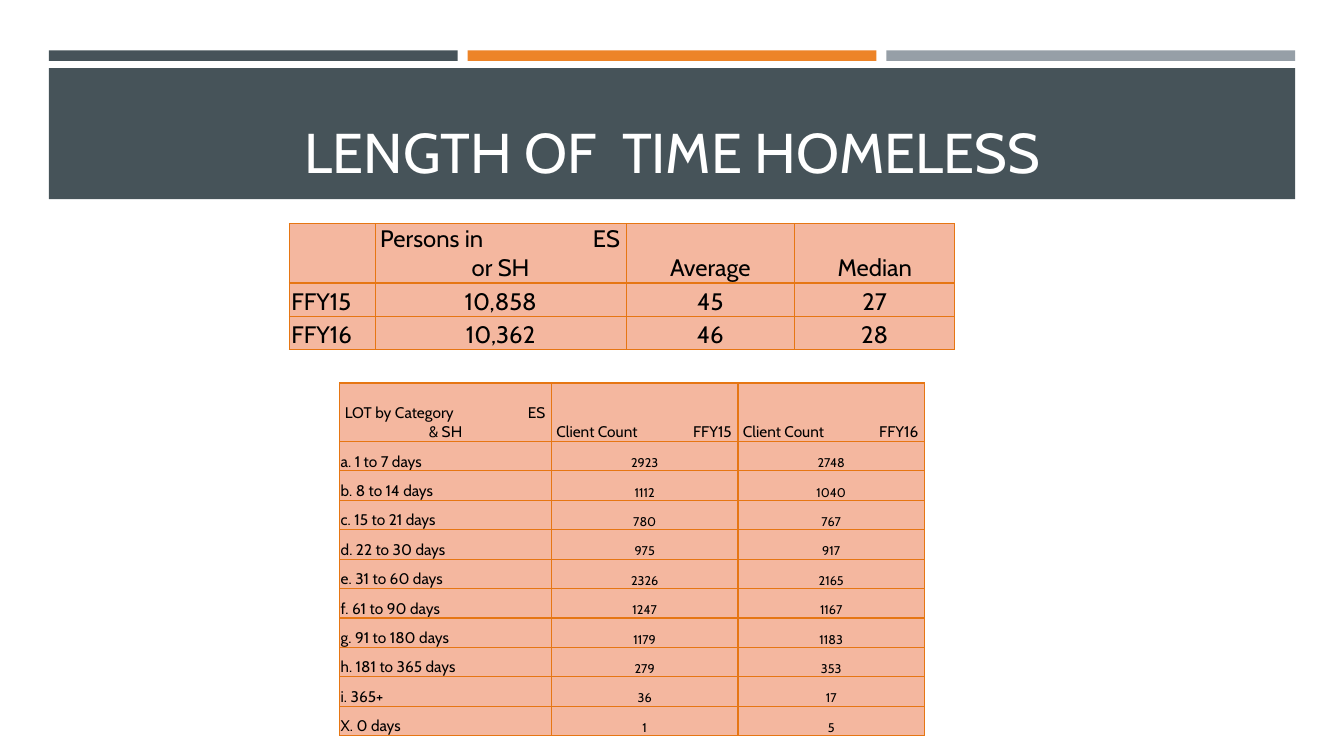
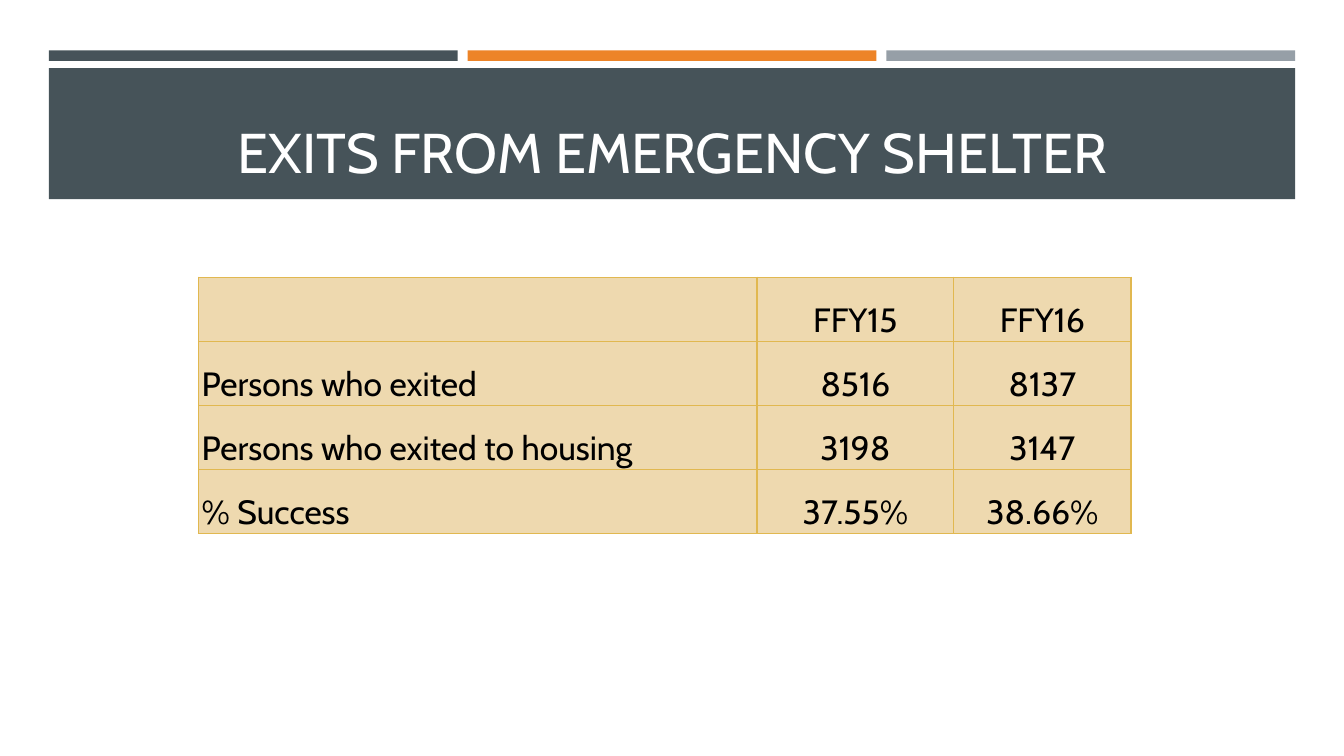
"""Build two slides of tables on time spent homeless and exits from shelter."""
from dataclasses import dataclass

from lxml.etree import SubElement
from pptx import Presentation
from pptx.dml.color import RGBColor
from pptx.enum.shapes import MSO_SHAPE
from pptx.enum.text import MSO_ANCHOR, MSO_AUTO_SIZE, PP_ALIGN
from pptx.oxml import parse_xml
from pptx.oxml.ns import nsdecls, qn
from pptx.util import Inches, Pt


@dataclass(frozen=True)
class Theme:
    font: str = "Cabin"
    slate: str = "465359"
    orange: str = "ED8428"
    gray: str = "969FA7"
    white: str = "FFFFFF"
    black: str = "000000"
    peach: str = "F4B79F"
    peach_border: str = "E67613"
    sand: str = "EED9AF"
    sand_border: str = "E1B850"
    title_size: float = 40
    large_size: float = 24
    medium_size: float = 17
    label_size: float = 11
    count_size: float = 9


theme = Theme()
presentation = Presentation()
presentation.slide_width = Inches(13.33)
presentation.slide_height = Inches(7.5)
column_unit = presentation.slide_width / 100
row_unit = presentation.slide_height / 100
title_layout = presentation.slide_layouts[5]


def add_run(paragraph, text, size, color):
    run = paragraph.add_run()
    run.text = text
    run.font.name = theme.font
    run.font.size = Pt(size)
    run.font.bold = False
    run.font.color.rgb = RGBColor.from_string(color)


def add_grid(slide, grid):
    left, top = grid["corner"]
    widths = [int(width * column_unit) for width in grid["columns"]]
    heights = [int(height * row_unit) for height in grid["heights"]]
    table = slide.shapes.add_table(
        len(heights), len(widths), int(left * column_unit), int(top * row_unit),
        sum(widths), sum(heights)).table
    table.first_row = table.horz_banding = False
    for column, width in zip(table.columns, widths):
        column.width = width
    for row, height in zip(table.rows, heights):
        row.height = height
    for row_index, values in enumerate(grid["values"]):
        for column_index, text in enumerate(values):
            cell = table.cell(row_index, column_index)
            cell.fill.solid()
            cell.fill.fore_color.rgb = RGBColor.from_string(grid["fill"])
            for position, side in enumerate(("lnL", "lnR", "lnT", "lnB")):
                cell._tc.get_or_add_tcPr().insert(position, parse_xml(
                    f'<a:{side} {nsdecls("a")} w="{Pt(1)}"><a:solidFill>'
                    f'<a:srgbClr val="{grid["border"]}"/></a:solidFill></a:{side}>'))
            cell.vertical_anchor = MSO_ANCHOR.BOTTOM
            margin = Inches(0.05 if "\t" in text else grid["margin"])
            cell.margin_left = cell.margin_right = margin
            cell.margin_top = Inches(0.01)
            cell.margin_bottom = 0
            is_count = row_index > 0 and column_index > 0
            size = grid["count_size"] if is_count else grid["label_size"]
            for line_index, line in enumerate(text.split("\n")):
                paragraph = (cell.text_frame.add_paragraph() if line_index
                             else cell.text_frame.paragraphs[0])
                is_label = row_index > 0 and column_index == 0
                paragraph.alignment = (PP_ALIGN.LEFT if is_label or "\t" in line
                                       else PP_ALIGN.CENTER)
                if "\t" in line:
                    tabs = SubElement(paragraph._p.get_or_add_pPr(), qn("a:tabLst"))
                    stop = widths[column_index] - 2 * margin - Inches(0.01)
                    SubElement(tabs, qn("a:tab"), pos=str(stop), algn="r")
                if line:
                    add_run(paragraph, line, size, theme.black)


persons_grid = {
    "corner": (21.53, 29.6), "columns": [6.38, 18.68, 12.53, 11.93],
    "heights": [7.8, 4.4, 4.4], "margin": 0.02,
    "fill": theme.peach, "border": theme.peach_border,
    "label_size": theme.medium_size, "count_size": theme.medium_size,
    "values": [
        ("", "Persons in\tES\nor SH", "Average", "Median"),
        ("FFY15", "10,858", "45", "27"),
        ("FFY16", "10,362", "46", "28"),
    ],
}
category_grid = {
    "corner": (25.28, 50.67), "columns": [15.75, 13.88, 13.88],
    "heights": [7.73] + [3.89] * 10, "margin": 0.01,
    "fill": theme.peach, "border": theme.peach_border,
    "label_size": theme.label_size, "count_size": theme.count_size,
    "values": [
        ("LOT by Category\tES\n& SH", "Client Count\tFFY15", "Client Count\tFFY16"),
        ("a. 1 to 7 days", "2923", "2748"),
        ("b. 8 to 14 days", "1112", "1040"),
        ("c. 15 to 21 days", "780", "767"),
        ("d. 22 to 30 days", "975", "917"),
        ("e. 31 to 60 days", "2326", "2165"),
        ("f. 61 to 90 days", "1247", "1167"),
        ("g. 91 to 180 days", "1179", "1183"),
        ("h. 181 to 365 days", "279", "353"),
        ("i. 365+", "36", "17"),
        ("X. 0 days", "1", "5"),
    ],
}
exits_grid = {
    "corner": (14.78, 36.67), "columns": [41.55, 14.63, 13.2],
    "heights": [8.47] * 4, "margin": 0.03,
    "fill": theme.sand, "border": theme.sand_border,
    "label_size": theme.large_size, "count_size": theme.large_size,
    "values": [
        ("", "FFY15", "FFY16"),
        ("Persons who exited", "8516", "8137"),
        ("Persons who exited to housing", "3198", "3147"),
        ("% Success", "37.55%", "38.66%"),
    ],
}
slides = [
    ("LENGTH OF  TIME HOMELESS", [persons_grid, category_grid]),
    ("EXITS FROM EMERGENCY SHELTER", [exits_grid]),
]

band_left, band_width, bar_gap = 3.64, 92.72, 0.75
bar_width = (band_width - 2 * bar_gap) / 3
bands = [(band_left + index * (bar_width + bar_gap), 6.67, bar_width, 1.4, color)
         for index, color in enumerate((theme.slate, theme.orange, theme.gray))]
bands.append((band_left, 9, band_width, 17.33, theme.slate))

for slide_index, (title_text, grids) in enumerate(slides):
    slide = presentation.slides.add_slide(title_layout)
    if slide_index == 0:
        for band_index, (left, top, width, height, color) in enumerate(bands):
            shape = slide.shapes.add_shape(
                MSO_SHAPE.RECTANGLE, int(left * column_unit), int(top * row_unit),
                int(width * column_unit), int(height * row_unit))
            shape.shadow.inherit = False
            shape.fill.solid()
            shape.fill.fore_color.rgb = RGBColor.from_string(color)
            shape.line.fill.background()
            shape.name = f"Band {band_index + 1}"
            shape.element.nvSpPr.cNvPr.set("id", str(20 + band_index))
            title_layout.shapes.element.insert(2 + band_index, shape.element)
    title = slide.shapes.title
    title.left, title.width = int(4.8 * column_unit), int(90.45 * column_unit)
    title.top, title.height = int(10.27 * row_unit), int(14.8 * row_unit)
    title.text_frame.auto_size = MSO_AUTO_SIZE.NONE
    title.text_frame.vertical_anchor = MSO_ANCHOR.BOTTOM
    title.text_frame.paragraphs[0].alignment = PP_ALIGN.CENTER
    add_run(title.text_frame.paragraphs[0], title_text, theme.title_size, theme.white)
    for grid in grids:
        add_grid(slide, grid)

presentation.save("out.pptx")
